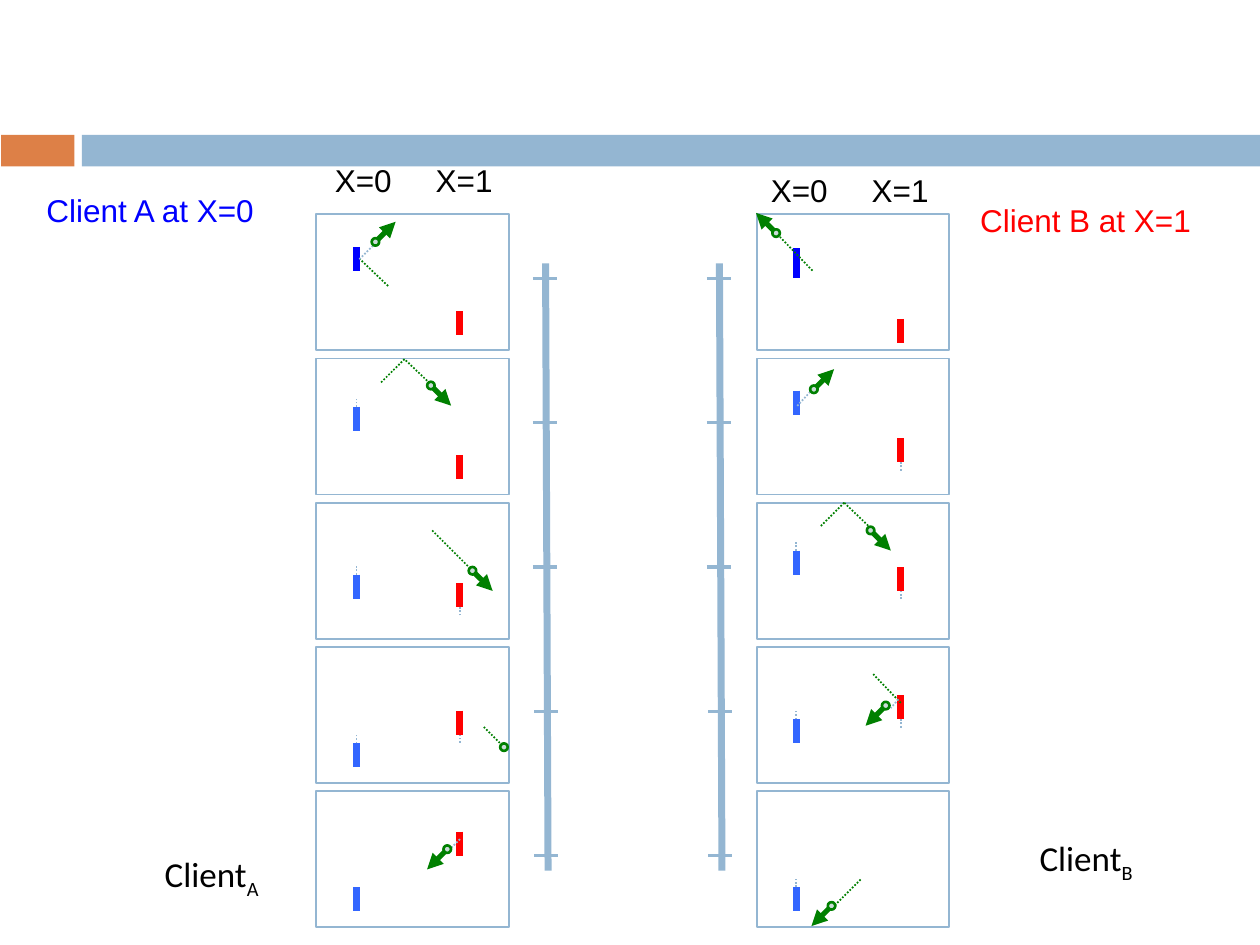
from pptx import Presentation
from pptx.dml.color import RGBColor
from pptx.enum.dml import MSO_LINE
from pptx.enum.shapes import MSO_CONNECTOR, MSO_SHAPE
from pptx.enum.text import PP_ALIGN
from pptx.oxml.ns import qn
from pptx.util import Inches, Pt
from lxml import etree

STRAIGHT = MSO_CONNECTOR.STRAIGHT
RECTANGLE, OVAL = MSO_SHAPE.RECTANGLE, MSO_SHAPE.OVAL
DOTTED = MSO_LINE.ROUND_DOT
LEFT, CENTER = PP_ALIGN.LEFT, PP_ALIGN.CENTER
COLORS = {
    "orange": "DD8047", "steel": "94B6D2", "black": "000000",
    "blue": "0000FF", "light_blue": "3366FF", "red": "FF0000",
    "green": "008000", "ball": "CADCD8",
}
RGB = {name: RGBColor.from_string(value) for name, value in COLORS.items()}

FRAME_TOP, FRAME_PITCH, FRAME_HEIGHT = 1.7, 1.145, 1.08
PADDLE, TRAIL, BALL = 0.19, 0.065, 0.06
ARROW_START, ARROW_END = 0.02, 0.16

presentation = Presentation()
presentation.slide_width, presentation.slide_height = Inches(10), Inches(7.5)
slide = presentation.slides.add_slide(presentation.slide_layouts[6])


def add_text(text, left, top, width, height, size=18, font="Arial",
             color="black", align=LEFT, subscript="", tab=None):
    box = slide.shapes.add_textbox(Inches(left), Inches(top), Inches(width), Inches(height))
    box.text_frame.word_wrap = True
    paragraph = box.text_frame.paragraphs[0]
    paragraph.alignment = align
    if tab:
        tabs = etree.SubElement(paragraph._p.get_or_add_pPr(), qn("a:tabLst"))
        etree.SubElement(tabs, qn("a:tab"), pos=str(Inches(tab)), algn="l")
    for part in filter(None, (text, subscript)):
        run = paragraph.add_run()
        run.text = part
        run.font.size, run.font.name = Pt(size), font
        run.font.color.rgb = RGB[color]
    if subscript:
        run._r.get_or_add_rPr().set("baseline", "-25000")


def add_line(x1, y1, x2, y2, color="steel", width=1, dash=None, arrow=False):
    line = slide.shapes.add_connector(STRAIGHT, Inches(x1), Inches(y1), Inches(x2), Inches(y2))
    line.line.color.rgb = RGB[color]
    line.line.width = Pt(width)
    if dash:
        line.line.dash_style = dash
    if arrow:
        etree.SubElement(line.line._get_or_add_ln(), qn("a:tailEnd"), type="triangle")
    etree.SubElement(line._element.spPr, qn("a:effectLst"))


# Header band
for left, width, color in ((0.01, 0.58, "orange"), (0.65, 9.35, "steel")):
    band = slide.shapes.add_shape(RECTANGLE, Inches(left), Inches(1.07), Inches(width), Inches(0.25))
    band.shadow.inherit = False
    band.fill.solid()
    band.fill.fore_color.rgb = RGB[color]
    band.line.fill.background()

# Time axes, leaning slightly to the right, with one tick per frame
for axis in (4.33, 5.71):
    add_line(axis, 2.09, axis + 0.02, 6.91, width=4)
    for index in range(5):
        tick_left = axis - 0.1 + (0.01 if index > 2 else 0)
        tick_y = 2.21 + index * FRAME_PITCH
        add_line(tick_left, tick_y, tick_left + 0.19, tick_y, width=1.75)

# Frames: paddles are (top, has trail), ball is (centre x, centre y),
# heading is the arrow direction, paths are dotted lines
CLIENTS = [
    {"left": 2.51, "width": 1.53, "blue_x": 2.83, "red_x": 3.65, "frames": [
        {"blue": (1.96, False), "red": (2.47, False), "ball": (2.98, 1.92), "heading": (1, -1),
         "paths": [(2.96, 1.95, 2.85, 2.06, "steel"), (3.08, 2.27, 2.86, 2.06, "green")]},
        {"blue": (3.23, True), "red": (3.61, False), "ball": (3.42, 3.06), "heading": (1, 1),
         "paths": [(3.21, 2.85, 3.02, 3.04, "green"), (3.43, 3.06, 3.21, 2.85, "green")]},
        {"blue": (4.56, True), "red": (4.63, True), "ball": (3.75, 4.53), "heading": (1, 1),
         "paths": [(3.43, 4.21, 3.78, 4.56, "green")]},
        {"blue": (5.9, True), "red": (5.64, True), "ball": (4.0, 5.93), "heading": None,
         "paths": [(3.84, 5.77, 3.98, 5.91, "green")]},
        {"blue": (7.04, False), "red": (6.6, False), "ball": (3.55, 6.74), "heading": (-1, 1),
         "paths": [(3.65, 6.66, 3.58, 6.73, "steel")]},
    ]},
    {"left": 6.01, "width": 1.52, "blue_x": 6.32, "red_x": 7.15, "frames": [
        {"blue": (1.97, False), "red": (2.53, False), "ball": (6.16, 1.85), "heading": (-1, -1),
         "blue_height": 0.24, "paths": [(6.19, 1.88, 6.45, 2.15, "green")]},
        {"blue": (3.1, False), "red": (3.48, True), "ball": (6.46, 3.09), "heading": (1, -1),
         "paths": [(6.43, 3.11, 6.32, 3.23, "steel")]},
        {"blue": (4.37, True), "red": (4.5, True), "ball": (6.91, 4.21), "heading": (1, 1),
         "paths": [(6.7, 3.99, 6.51, 4.18, "green"), (6.93, 4.21, 6.7, 3.99, "green")]},
        {"blue": (5.71, True), "red": (5.52, True), "ball": (7.03, 5.6), "heading": (-1, 1),
         "paths": [(6.93, 5.35, 7.15, 5.58, "green"), (7.13, 5.55, 7.07, 5.62, "steel")]},
        {"blue": (7.04, True), "red": None, "ball": (6.6, 7.19), "heading": (-1, 1),
         "paths": [(6.83, 6.98, 6.63, 7.18, "green")]},
    ]},
]

for client in CLIENTS:
    for index, frame in enumerate(client["frames"]):
        border = slide.shapes.add_shape(
            RECTANGLE, Inches(client["left"]), Inches(FRAME_TOP + index * FRAME_PITCH),
            Inches(client["width"]), Inches(FRAME_HEIGHT))
        border.shadow.inherit = False
        border.fill.background()
        border.line.color.rgb = RGB["steel"]
        border.line.width = Pt(1)

        # Blue paddle moves down, so its trail is above
        x = client["blue_x"]
        top, has_trail = frame["blue"]
        add_line(x, top, x, top + frame.get("blue_height", PADDLE),
                 color="light_blue" if index else "blue", width=4)
        if has_trail:
            add_line(x, top, x, top - TRAIL, dash=DOTTED)

        # Red paddle moves up, so its trail is below
        if frame["red"]:
            x = client["red_x"]
            top, has_trail = frame["red"]
            add_line(x, top, x, top + PADDLE, color="red", width=4)
            if has_trail:
                add_line(x, top + PADDLE + TRAIL, x, top + PADDLE, dash=DOTTED)

        # Ball with its path and heading
        for x1, y1, x2, y2, color in frame["paths"]:
            add_line(x1, y1, x2, y2, color=color, dash=DOTTED)
        x, y = frame["ball"]
        ball = slide.shapes.add_shape(OVAL, Inches(x - BALL / 2), Inches(y - BALL / 2),
                                      Inches(BALL), Inches(BALL))
        ball.shadow.inherit = False
        ball.fill.solid()
        ball.fill.fore_color.rgb = RGB["ball"]
        ball.line.color.rgb = RGB["green"]
        ball.line.width = Pt(1.5)
        if frame["heading"]:
            dx, dy = frame["heading"]
            add_line(x + dx * ARROW_START, y + dy * ARROW_START,
                     x + dx * ARROW_END, y + dy * ARROW_END,
                     color="green", width=3, arrow=True)

# Labels
add_text("Client", 0.98, 6.72, 1.4, 0.44, size=20, font="Calibri", align=CENTER, subscript="A")
add_text("Client", 7.92, 6.59, 1.4, 0.44, size=20, font="Calibri", align=CENTER, subscript="B")
add_text("Client A at X=0", 0.27, 1.47, 1.87, 0.4, color="blue")
add_text("Client B at X=1", 7.68, 1.55, 1.89, 0.4, color="red")
for left, top in ((2.56, 1.23), (6.02, 1.31)):
    add_text("X=0\tX=1", left, top, 1.47, 0.4, tab=0.8)

presentation.save("out.pptx")
